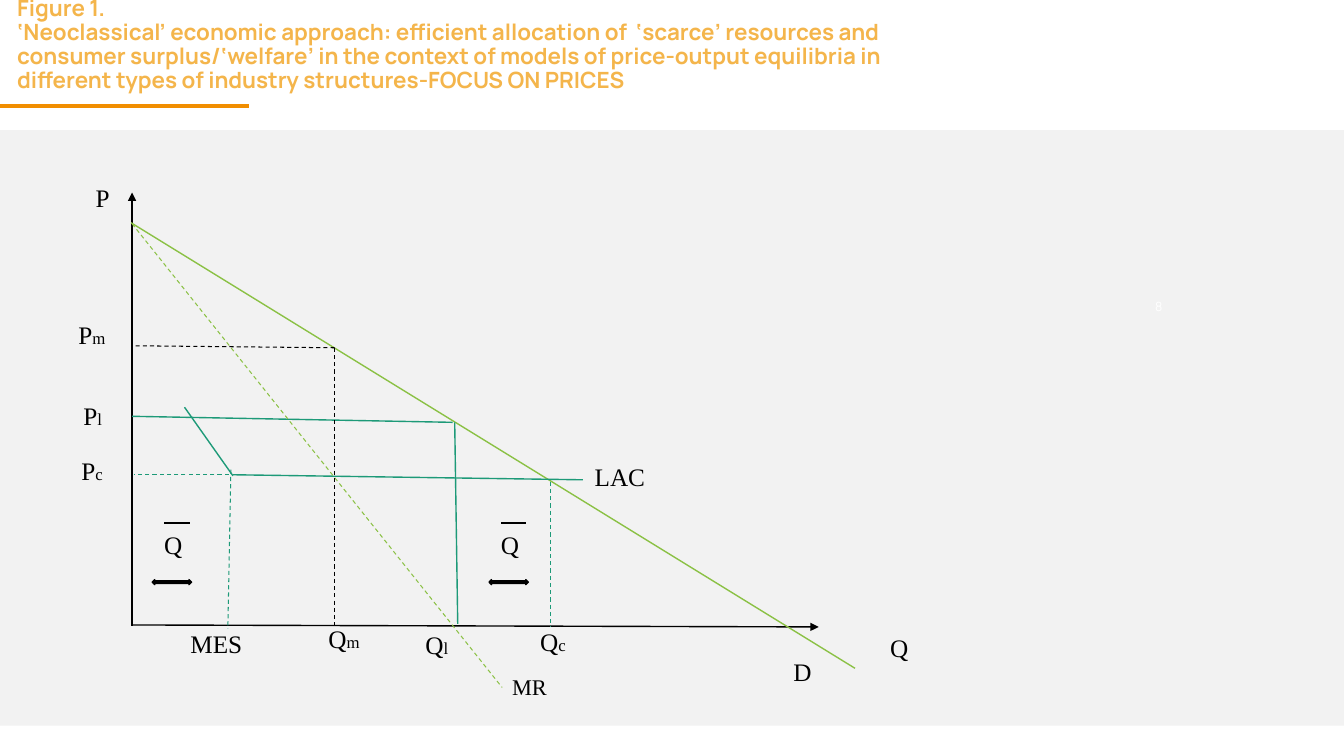
from lxml import etree
from pptx import Presentation
from pptx.dml.color import RGBColor
from pptx.enum.dml import MSO_LINE
from pptx.enum.shapes import MSO_CONNECTOR, MSO_SHAPE
from pptx.enum.text import MSO_ANCHOR, PP_ALIGN
from pptx.oxml.ns import qn
from pptx.util import Inches, Pt

STRAIGHT = MSO_CONNECTOR.STRAIGHT
DASH = MSO_LINE.DASH
RECTANGLE = MSO_SHAPE.RECTANGLE
DOUBLE_ARROW = MSO_SHAPE.LEFT_RIGHT_ARROW
LEFT = PP_ALIGN.LEFT
TOP = MSO_ANCHOR.TOP

BLACK = RGBColor(0x00, 0x00, 0x00)
WHITE = RGBColor(0xFF, 0xFF, 0xFF)
PANEL = RGBColor(0xF2, 0xF2, 0xF2)
ORANGE = RGBColor(0xF1, 0x8E, 0x00)
AMBER = RGBColor(0xF4, 0xB5, 0x4B)
LIME = RGBColor(0x8B, 0xC1, 0x45)
GREEN = RGBColor(0x1D, 0x9A, 0x78)

SERIF = "Times New Roman"
SANS = "Manrope"

TITLE = [
    "Figure 1.",
    "‘Neoclassical’ economic approach: efficient allocation of  ‘scarce’ resources and "
    "consumer surplus/‘welfare’ in the context of models of price-output equilibria in "
    "different types of industry structures-FOCUS ON PRICES",
]

AXES = [(1.31, 6.21, 1.31, 1.91), (1.31, 6.2, 8.12, 6.22)]

CURVES = [
    (1.3, 2.21, 8.48, 6.63, LIME),
    (2.31, 4.71, 5.78, 4.76, GREEN),
    (1.83, 4.04, 2.31, 4.72, GREEN),
    (4.49, 4.19, 1.31, 4.13, GREEN),
    (4.51, 4.19, 4.54, 6.19, GREEN),
]

DASHED = [
    (1.31, 2.22, 4.98, 6.82, LIME),
    (3.32, 3.45, 1.3, 3.43, BLACK),
    (3.32, 3.45, 3.32, 6.24, BLACK),
    (5.46, 4.78, 5.46, 6.22, GREEN),
    (2.27, 4.71, 1.33, 4.71, GREEN),
    (2.29, 4.66, 2.26, 6.24, GREEN),
]

LABELS = [
    (0.85, 1.76, 0.4, "P", ""),
    (8.73, 6.22, 0.4, "Q", ""),
    (7.77, 6.46, 0.4, "D", ""),
    (5.26, 6.16, 0.56, "Q", "c"),
    (4.12, 6.19, 0.56, "Q", "l"),
    (3.16, 6.13, 0.67, "Q", "m"),
    (1.79, 6.18, 0.86, "MES", ""),
    (5.8, 4.53, 0.86, "LAC", ""),
    (0.68, 3.12, 0.7, "P", "m"),
    (0.73, 3.92, 0.7, "P", "l"),
    (0.71, 4.47, 0.7, "P", "c"),
]

MEAN_OUTPUTS = [1.53, 4.87]


def add_line(s, x1, y1, x2, y2, color, width=1, dash=None, arrow=False):
    line = s.shapes.add_connector(STRAIGHT, Inches(x1), Inches(y1), Inches(x2), Inches(y2))
    line.line.color.rgb = color
    line.line.width = Pt(width)
    if dash:
        line.line.dash_style = dash
    if arrow:
        etree.SubElement(line.line._get_or_add_ln(), qn("a:tailEnd"), type="triangle")
    etree.SubElement(line._element.spPr, qn("a:effectLst"))


def add_shape(s, kind, x, y, w, h, color, outlined=False):
    sp = s.shapes.add_shape(kind, Inches(x), Inches(y), Inches(w), Inches(h))
    sp.shadow.inherit = False
    sp.fill.solid()
    sp.fill.fore_color.rgb = color
    if outlined:
        sp.line.color.rgb = color
        sp.line.width = Pt(1)
    else:
        sp.line.fill.background()


def style(font, name, size, color):
    font.name = name
    font.size = Pt(size)
    font.color.rgb = color


def add_label(s, x, y, w, text, sub="", size=18, h=0.41, font=SERIF, color=BLACK):
    tf = s.shapes.add_textbox(Inches(x), Inches(y), Inches(w), Inches(h)).text_frame
    tf.word_wrap = True
    p = tf.paragraphs[0]
    style(p.font, font, size, color)
    p.add_run().text = text
    if sub:
        r = p.add_run()
        r.text = sub
        r.font.size = Pt(12)


def add_title(s):
    sp = s.shapes.title
    sp.left, sp.top, sp.width, sp.height = map(Inches, (0.07, -0.08, 9.45, 1.18))
    tf = sp.text_frame
    tf.text = "\n".join(TITLE)
    tf.word_wrap = True
    tf.vertical_anchor = TOP
    for p in tf.paragraphs:
        p.alignment = LEFT
        p.line_spacing = 0.9
        p.space_before = Pt(0)
        style(p.font, SANS, 16, AMBER)
        p.font.bold = True


def add_mean_output(s, x):
    add_label(s, x, 5.2, 0.4, "Q")
    add_shape(s, DOUBLE_ARROW, x - 0.02, 5.75, 0.39, 0.05, BLACK, outlined=True)
    add_line(s, x + 0.1, 5.19, x + 0.35, 5.19, BLACK)


def main():
    prs = Presentation()
    prs.slide_width = Inches(13.33)
    prs.slide_height = Inches(7.5)
    s = prs.slides.add_slide(prs.slide_layouts[5])

    add_shape(s, RECTANGLE, 0, 1.29, 13.33, 5.91, PANEL)
    add_line(s, 0, 1.05, 2.47, 1.05, ORANGE, width=3)
    add_title(s)
    for axis in AXES:
        add_line(s, *axis, BLACK, arrow=True)
    for curve in CURVES:
        add_line(s, *curve)
    for guide in DASHED:
        add_line(s, *guide, width=0.75, dash=DASH)
    for label in LABELS:
        add_label(s, *label)
    add_label(s, 4.98, 6.63, 0.79, "MR", size=16, h=0.37)
    for x in MEAN_OUTPUTS:
        add_mean_output(s, x)
    add_label(s, 11.36, 2.92, 0.4, "8", size=9, h=0.28, font=SANS, color=WHITE)

    prs.save("out.pptx")


if __name__ == "__main__":
    main()
